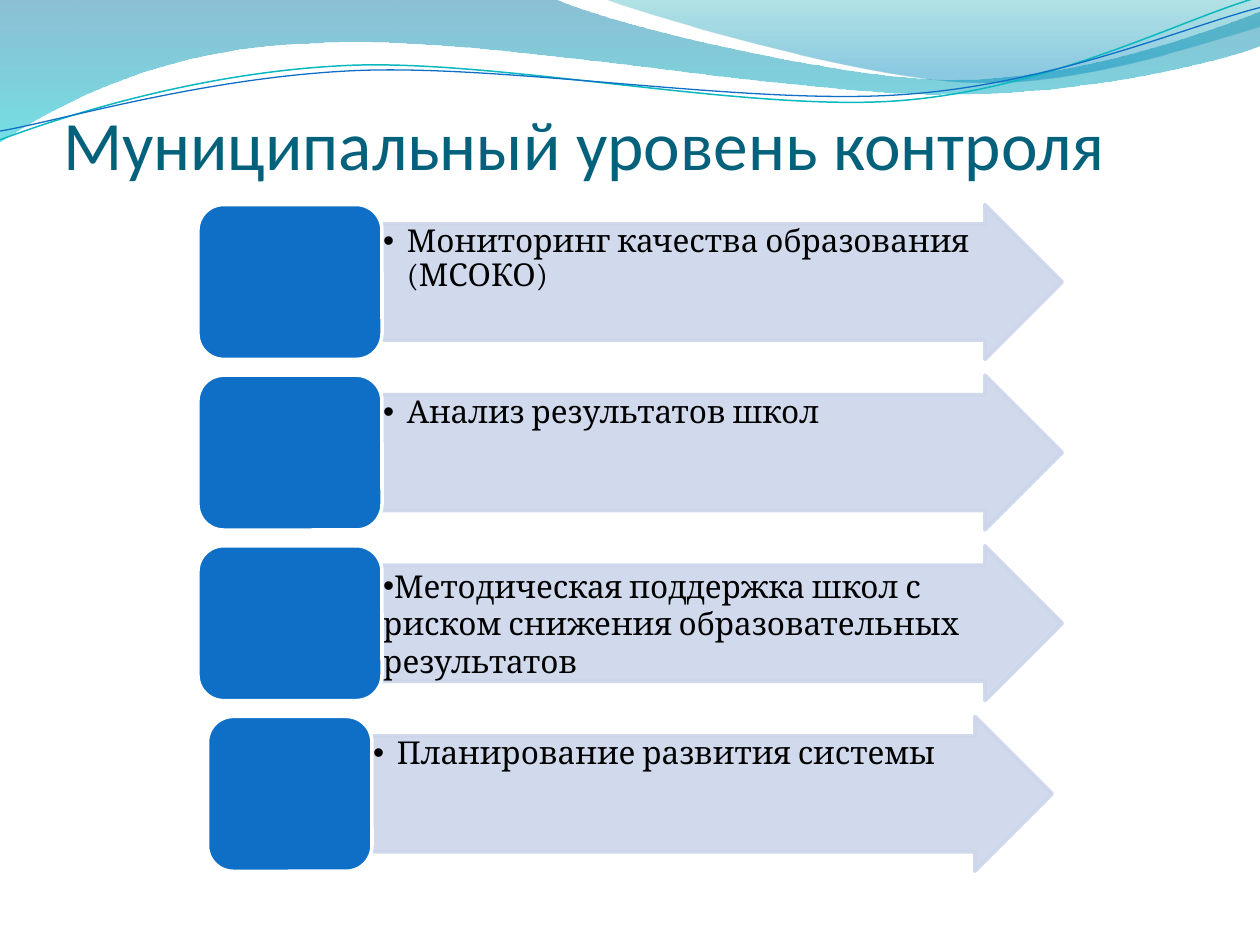
from lxml.etree import SubElement
from pptx import Presentation
from pptx.dml.color import RGBColor as RGB
from pptx.enum.shapes import MSO_SHAPE as Shape
from pptx.enum.text import MSO_ANCHOR as Anchor, MSO_AUTO_SIZE as Fit, PP_ALIGN as Align
from pptx.oxml.ns import qn
from pptx.util import Pt

HUES = {
    "title": "04617B", "text": "000000", "block": "0F6FC6", "edge": "FFFFFF",
    "arrow": "CCD5EA", "teal": "0AB8BF", "blue": "0F6FC6",
}

# Each curve is a start point, then steps: 2 numbers for a line, 6 for a Bezier.
BANDS = [
    ([(0, 0), (316.8, -0.7), (342.7, 12.2, 478.1, 45.4, 545.8, 45.4),
      (614.2, 45.4, 689.8, 18.7, 720, 6.5), (720.7, 25.9),
      (707.8, 31.7, 626.4, 54.7, 537.1, 54), (447.8, 54, 275, 20.2, 185, 24.5),
      (92.9, 25.9, 33.1, 59.8, -0.7, 81.4)],
     [(0, "0074A1", 45), (1, "00C6CF", 55)]),
    ([(344.9, -0.7), (366.5, 7.9, 491, 44.6, 553.7, 46.8),
      (616.3, 49.7, 691.9, 23, 720, 15.1), (720, 0)],
     [(0, "00A1A9", 30), (0.8, "008BBF", 45)]),
]
STRANDS = [
    ([(0, 79.9), (34.6, 67, 113.8, 41, 199.4, 37.4),
      (284.4, 33.8, 427, 64.1, 513.4, 57.6),
      (599.8, 51.1, 675.4, 10.8, 718.6, -1.4)], "teal", 0.85),
    ([(0, 74.9), (33.8, 69.1, 118.1, 43.9, 203.8, 40.3),
      (290.2, 36.7, 429.8, 60.5, 516.2, 54),
      (601.9, 48.2, 677.5, 15.1, 720, 4.3)], "blue", 0.75),
]

# Text, left edge of the block, width of the block, hanging indent, line spacing
ROWS = [
    ("Мониторинг качества образования (МСОКО)", 113.1, 105.2, 13.5, 0.9),
    ("Анализ результатов школ", 113.1, 105.2, 13.5, 0.9),
    ("Методическая поддержка школ с риском снижения образовательных результатов",
     113.1, 105.2, 0, 1),
    ("Планирование развития системы", 118.6, 94, 13.5, 0.9),
]
TOP, STEP, HIGH = 116.9, 97.5, 88.5


def bend(shape, path):
    """Join the three points of each Bezier step into one curve."""
    nodes = iter(list(shape._element.iter(qn("a:lnTo"))))
    for step in path[1:]:
        group = [next(nodes) for _ in range(len(step) // 2)]
        if len(group) == 3:
            curve = group[0].makeelement(qn("a:cubicBezTo"))
            group[0].addprevious(curve)
            for node in group:
                curve.append(node[0])
                node.getparent().remove(node)


def fade(node, rate):
    """Give every colour under the node an opacity in percent."""
    for hue in node.iter(qn("a:srgbClr")):
        SubElement(hue, qn("a:alpha"), val=str(rate * 1000))


class Deck:
    def __init__(self):
        self.show = Presentation()
        self.show.slide_width, self.show.slide_height = Pt(720), Pt(540)
        self.slide = self.show.slides.add_slide(self.show.slide_layouts[5])
        self.shapes = self.slide.shapes

    def curve(self, path, close):
        pts = [(Pt(x), Pt(y)) for step in path for x, y in zip(step[::2], step[1::2])]
        pen = self.shapes.build_freeform(*pts[0])
        pen.add_line_segments(pts[1:], close=close)
        shape = pen.convert_to_shape()
        bend(shape, path)
        shape.shadow.inherit = False
        return shape

    def band(self, path, stops):
        shape = self.curve(path, True)
        shape.line.fill.background()
        shape.fill.gradient()
        shape.fill.gradient_angle = 270
        nodes = shape._element.spPr.iter(qn("a:gs"))
        for stop, node, (pos, hue, rate) in zip(shape.fill.gradient_stops, nodes, stops):
            stop.position = pos
            stop.color.rgb = RGB.from_string(hue)
            fade(node, rate)

    def strand(self, path, hue, width):
        shape = self.curve(path, False)
        shape.fill.background()
        self.line(shape, hue, width)

    def line(self, shape, hue, width):
        shape.line.color.rgb = RGB.from_string(HUES[hue])
        shape.line.width = Pt(width)

    def font(self, para, name, size, hue):
        for run in para.runs:
            run.font.name, run.font.size = name, Pt(size)
            run.font.color.rgb = RGB.from_string(HUES[hue])

    def frame(self, shape, *gaps):
        frame = shape.text_frame
        frame.word_wrap, frame.auto_size = True, Fit.NONE
        (frame.margin_left, frame.margin_top,
         frame.margin_right, frame.margin_bottom) = map(Pt, gaps)
        return frame

    def title(self, text):
        shape = self.shapes.title
        self.shapes._spTree.append(shape._element)  # in front of the waves
        shape.left, shape.top, shape.width, shape.height = map(Pt, (36, 55.2, 664, 50.4))
        frame = self.frame(shape, 0, 3.6, 0, 0)
        frame.vertical_anchor = Anchor.BOTTOM
        frame.text = text
        para = frame.paragraphs[0]
        para.alignment = Align.LEFT
        self.font(para, "Calibri", 39.6, "title")

    def shape(self, kind, box, fill, edge):
        shape = self.shapes.add_shape(kind, *map(Pt, box))
        shape.shadow.inherit = False
        shape.fill.solid()
        shape.fill.fore_color.rgb = RGB.from_string(HUES[fill])
        self.line(shape, edge, 2)
        return shape

    def arrow(self, box):
        shape = self.shape(Shape.RIGHT_ARROW, box, "arrow", "arrow")
        shape.adjustments[0], shape.adjustments[1] = 0.75, 0.5
        fade(shape._element.spPr, 90)

    def bullet(self, box, text, hang, space):
        frame = self.frame(self.shapes.add_textbox(*map(Pt, box)), 0.7, 0.7, 0.7, 0.7)
        frame.text = text
        para = frame.paragraphs[0]
        para.level, para.line_spacing = 1, space
        props = para._p.get_or_add_pPr()
        props.set("marL", str(Pt(hang)))
        props.set("indent", str(-Pt(hang)))
        SubElement(props, qn("a:buFont"), typeface="Arial")
        SubElement(props, qn("a:buChar"), char="•")
        self.font(para, "Cambria", 18, "text")

    def row(self, top, text, left, width, hang, space):
        edge = left + width
        self.arrow((edge, top, 388.8, HIGH))
        self.bullet((edge, top + 11.2, 355.7, 66.2), text, hang, space)
        self.shape(Shape.ROUNDED_RECTANGLE, (left, top, width, HIGH), "block", "edge")


def main():
    deck = Deck()
    for band in BANDS:
        deck.band(*band)
    for strand in STRANDS:
        deck.strand(*strand)
    deck.title("Муниципальный уровень контроля")
    for i, row in enumerate(ROWS):
        deck.row(TOP + i * STEP, *row)
    deck.show.save("out.pptx")


if __name__ == "__main__":
    main()
